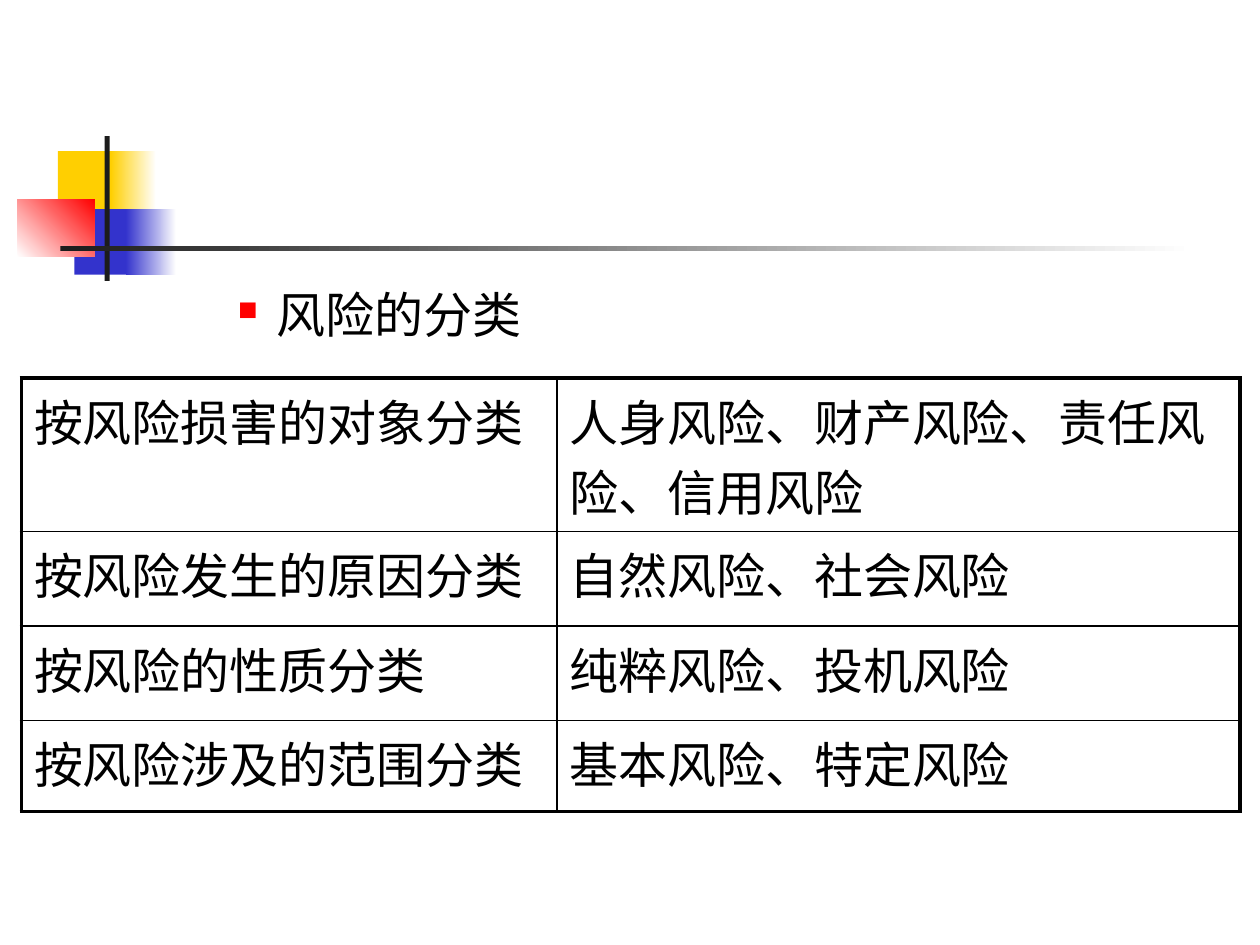
from dataclasses import dataclass

from lxml import etree
from pptx import Presentation
from pptx import util as u
from pptx.dml.color import RGBColor
from pptx.enum import shapes
from pptx.oxml import ns


@dataclass(frozen=True)
class Theme:
    font: str = "Cabin"
    bullet_font: str = "Wingdings"
    size: int = 28
    text: str = "000000"
    paper: str = "FFFFFF"
    yellow: str = "FFCF01"
    blue: str = "3333CC"
    red: str = "FF0000"
    dark: str = "1C1C1C"
    thin: float = 1
    thick: float = 2.25


THEME = Theme()
HEADING = "风险的分类"
ROWS = [
    ("按风险损害的对象分类", "人身风险、财产风险、责任风险、信用风险"),
    ("按风险发生的原因分类", "自然风险、社会风险"),
    ("按风险的性质分类", "纯粹风险、投机风险"),
    ("按风险涉及的范围分类", "基本风险、特定风险"),
]
COLUMN_WIDTHS = [4.25, 5.42]
ROW_HEIGHTS = [1.22, 0.75, 0.75, 0.72]
ORNAMENT = [
    ((0.46, 1.2, 0.48, 0.52), [THEME.yellow], 0),
    ((0.88, 1.2, 0.36, 0.52), [THEME.yellow, THEME.paper], 0),
    ((0.59, 1.66, 0.46, 0.52), [THEME.blue], 0),
    ((1, 1.66, 0.4, 0.52), [THEME.blue, THEME.paper], 0),
    ((0.14, 1.58, 0.61, 0.46), [THEME.paper, THEME.red], 45),
    ((0.83, 1.08, 0.04, 1.15), [THEME.dark], 0),
    ((0.48, 1.95, 9, 0.04), [THEME.dark, THEME.paper], 0),
]


def add_node(parent, tag, **values):
    return etree.SubElement(parent, ns.qn(f"a:{tag}"), values)


def add_block(page, place, colours, angle):
    block = page.shapes.add_shape(
        shapes.MSO_SHAPE.RECTANGLE, *map(u.Inches, place))
    block.shadow.inherit = False
    block.line.fill.background()
    if len(colours) == 1:
        block.fill.solid()
        block.fill.fore_color.rgb = RGBColor.from_string(colours[0])
        return
    block.fill.gradient()
    block.fill.gradient_angle = angle
    for stop, colour in zip(block.fill.gradient_stops, colours):
        stop.color.rgb = RGBColor.from_string(colour)


def write_text(frame, words):
    para = frame.paragraphs[0]
    spacing = add_node(para._p.get_or_add_pPr(), "spcBef")
    add_node(spacing, "spcPct", val="20000")
    span = para.add_run()
    span.text = words
    formats = {"name": THEME.font, "size": u.Pt(THEME.size)}
    for name, value in formats.items():
        setattr(span.font, name, value)
    span.font.color.rgb = RGBColor.from_string(THEME.text)
    return para


def add_heading(page):
    box = page.shapes.add_textbox(*map(u.Inches, (1.29, 2.21, 8.5, 4.5)))
    box.text_frame.word_wrap = True
    props = write_text(box.text_frame, HEADING)._p.get_or_add_pPr()
    indents = {"marL": u.Inches(0.81), "indent": u.Inches(-0.31)}
    for name, value in indents.items():
        props.set(name, str(value))
    add_node(add_node(props, "buClr"), "srgbClr", val=THEME.red)
    add_node(props, "buSzPct", val="55000")
    add_node(props, "buFont", typeface=THEME.bullet_font, charset="2")
    add_node(props, "buChar", char="n")


def add_borders(cell, outer_sides):
    props = cell._tc.get_or_add_tcPr()
    for side, is_outer in outer_sides.items():
        width = u.Pt(THEME.thick if is_outer else THEME.thin)
        line = add_node(props, f"ln{side}", w=str(width))
        add_node(add_node(line, "solidFill"), "srgbClr", val=THEME.text)


def add_grid(page):
    size = (sum(COLUMN_WIDTHS), sum(ROW_HEIGHTS))
    frame = page.shapes.add_table(
        len(ROWS), len(COLUMN_WIDTHS), *map(u.Inches, (0.17, 3, *size)))
    table = frame.table
    table.first_row = table.horz_banding = False
    for column, width in zip(table.columns, COLUMN_WIDTHS):
        column.width = u.Inches(width)
    for row, height in zip(table.rows, ROW_HEIGHTS):
        row.height = u.Inches(height)
    last_row, last_column = len(ROWS) - 1, len(COLUMN_WIDTHS) - 1
    for r, entries in enumerate(ROWS):
        for c, words in enumerate(entries):
            cell = table.cell(r, c)
            write_text(cell.text_frame, words)
            add_borders(cell, {"L": c == 0, "R": c == last_column,
                               "T": r == 0, "B": r == last_row})
            cell.fill.background()


def main():
    deck = Presentation()
    deck.slide_width, deck.slide_height = u.Inches(10), u.Inches(7.5)
    page = deck.slides.add_slide(deck.slide_layouts[6])
    page.background.fill.solid()
    page.background.fill.fore_color.rgb = RGBColor.from_string(THEME.paper)
    for place, colours, angle in ORNAMENT:
        add_block(page, place, colours, angle)
    add_heading(page)
    add_grid(page)
    deck.save("out.pptx")


if __name__ == "__main__":
    main()
